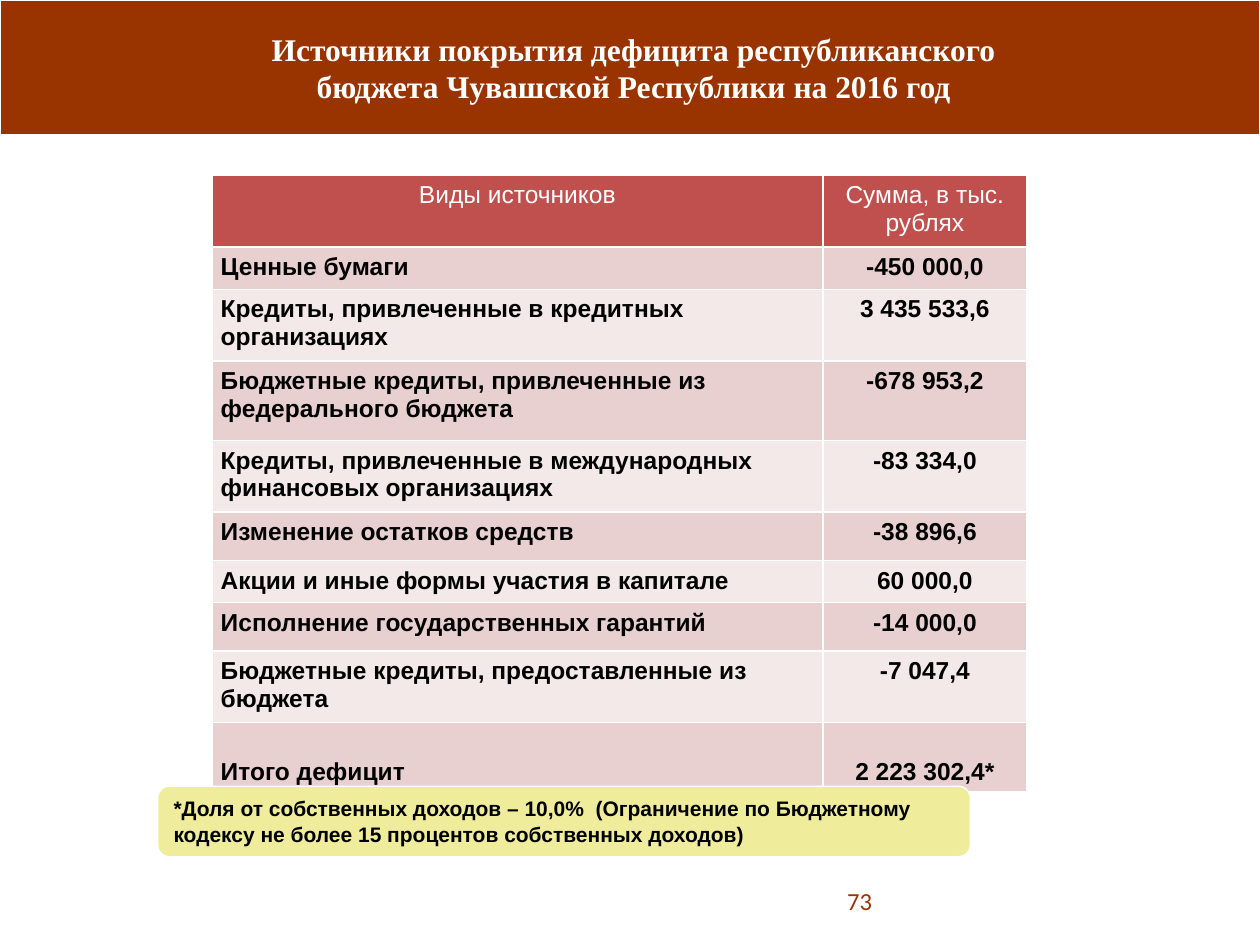
from dataclasses import dataclass

from lxml.etree import SubElement
from pptx import Presentation
from pptx.dml.color import RGBColor
from pptx.enum.shapes import MSO_SHAPE
from pptx.enum.text import MSO_ANCHOR, PP_ALIGN
from pptx.oxml.ns import qn
from pptx.util import Cm, Pt


@dataclass(frozen=True)
class Theme:
    white: str = "FFFFFF"
    black: str = "000000"
    banner: str = "993300"
    header: str = "C0504D"
    bands: tuple = ("E8D0D0", "F4E9E9")
    note: str = "EFED9B"
    number: str = "A03202"
    title_font: str = "Times New Roman"
    body_font: str = "Arial"
    number_font: str = "Calibri"
    title_size: int = 18
    body_size: int = 14
    note_size: int = 12
    line_width: float = 0.75
    border_width: int = 1


THEME = Theme()
HEADER = ("Виды источников", "Сумма, в тыс. рублях")
SOURCES = [
    ("Ценные бумаги", "-450 000,0", 0.79),
    ("Кредиты, привлеченные в кредитных организациях", "3 435 533,6", 0.94),
    ("Бюджетные кредиты, привлеченные из федерального бюджета", "-678 953,2", 1.6),
    ("Кредиты, привлеченные в международных финансовых организациях", "-83 334,0", 1.4),
    ("Изменение остатков средств", "-38 896,6", 0.97),
    ("Акции и иные формы участия в капитале", "60 000,0", 0.79),
    ("Исполнение государственных гарантий", "-14 000,0", 0.97),
    ("Бюджетные кредиты, предоставленные из бюджета", "-7 047,4", 0.99),
    ("Итого дефицит", "2 223 302,4*", 1.4),
]


def color(value):
    return RGBColor.from_string(value)


def write(frame, text, font, size, tint, bold=False, align=PP_ALIGN.LEFT):
    frame.word_wrap = True
    para = frame.paragraphs[0]
    para.text = text
    para.alignment = align
    para.font.name = font
    para.font.size = Pt(size)
    para.font.bold = bold
    para.font.color.rgb = color(tint)


def add_panel(page, kind, area, fill):
    panel = page.shapes.add_shape(kind, *map(Cm, area))
    panel.shadow.inherit = False
    panel.fill.solid()
    panel.fill.fore_color.rgb = color(fill)
    panel.line.color.rgb = color(THEME.white)
    panel.line.width = Pt(THEME.line_width)
    return panel


def add_label(page, area, *style, **options):
    box = page.shapes.add_textbox(*map(Cm, area))
    box.text_frame.vertical_anchor = MSO_ANCHOR.MIDDLE
    write(box.text_frame, *style, **options)


def add_borders(cell):
    properties = cell._tc.get_or_add_tcPr()
    for position, side in enumerate(("lnL", "lnR", "lnT", "lnB")):
        line = SubElement(properties, qn(f"a:{side}"), w=str(Pt(THEME.border_width)))
        fill = SubElement(line, qn("a:solidFill"))
        SubElement(fill, qn("a:srgbClr"), val=THEME.white)
        properties.insert(position, line)


def fill_cell(cell, text, fill, tint, bold, align):
    cell.margin_left = cell.margin_right = Cm(0.18)
    cell.margin_top = cell.margin_bottom = Cm(0.13)
    cell.fill.solid()
    cell.fill.fore_color.rgb = color(fill)
    add_borders(cell)
    write(cell.text_frame, text, THEME.body_font, THEME.body_size, tint, bold, align)


def add_sources_table(page):
    heights = [1.4] + [height for _, _, height in SOURCES]
    widths = (12.32, 4.11)
    table = page.shapes.add_table(
        len(heights), len(widths), Cm(4.27), Cm(3.53), Cm(sum(widths)), Cm(sum(heights))
    ).table
    for column, width in zip(table.columns, widths):
        column.width = Cm(width)
    for row, height in zip(table.rows, heights):
        row.height = Cm(height)
    for index, text in enumerate(HEADER):
        fill_cell(table.cell(0, index), text, THEME.header, THEME.white, False, PP_ALIGN.CENTER)
    for number, (name, amount, _) in enumerate(SOURCES):
        band = THEME.bands[number % 2]
        name_cell, amount_cell = table.rows[number + 1].cells
        fill_cell(name_cell, name, band, THEME.black, True, PP_ALIGN.LEFT)
        fill_cell(amount_cell, amount, band, THEME.black, True, PP_ALIGN.CENTER)
    for cell in table.rows[len(SOURCES)].cells:
        cell.vertical_anchor = MSO_ANCHOR.BOTTOM


def add_note(page, text):
    note = add_panel(page, MSO_SHAPE.ROUNDED_RECTANGLE, (3.18, 15.85, 16.38, 1.42), THEME.note)
    note.text_frame.vertical_anchor = MSO_ANCHOR.TOP
    write(note.text_frame, text, THEME.body_font, THEME.note_size, THEME.black, bold=True)


def main():
    deck = Presentation()
    deck.slide_width, deck.slide_height = Cm(25.4), Cm(19.05)
    page = deck.slides.add_slide(deck.slide_layouts[6])
    add_panel(page, MSO_SHAPE.RECTANGLE, (0, 0, 25.4, 2.72), THEME.banner)
    add_label(
        page, (4.75, 0, 16.05, 2.72),
        "Источники покрытия дефицита республиканского бюджета Чувашской Республики на 2016 год",
        THEME.title_font, THEME.title_size, THEME.white, bold=True, align=PP_ALIGN.CENTER,
    )
    add_sources_table(page)
    add_note(
        page,
        "*Доля от собственных доходов – 10,0%  (Ограничение по Бюджетному "
        "кодексу не более 15 процентов собственных доходов)",
    )
    add_label(
        page, (14.91, 17.65, 2.92, 1.02), "73",
        THEME.number_font, THEME.body_size, THEME.number, align=PP_ALIGN.RIGHT,
    )
    deck.save("out.pptx")


if __name__ == "__main__":
    main()
